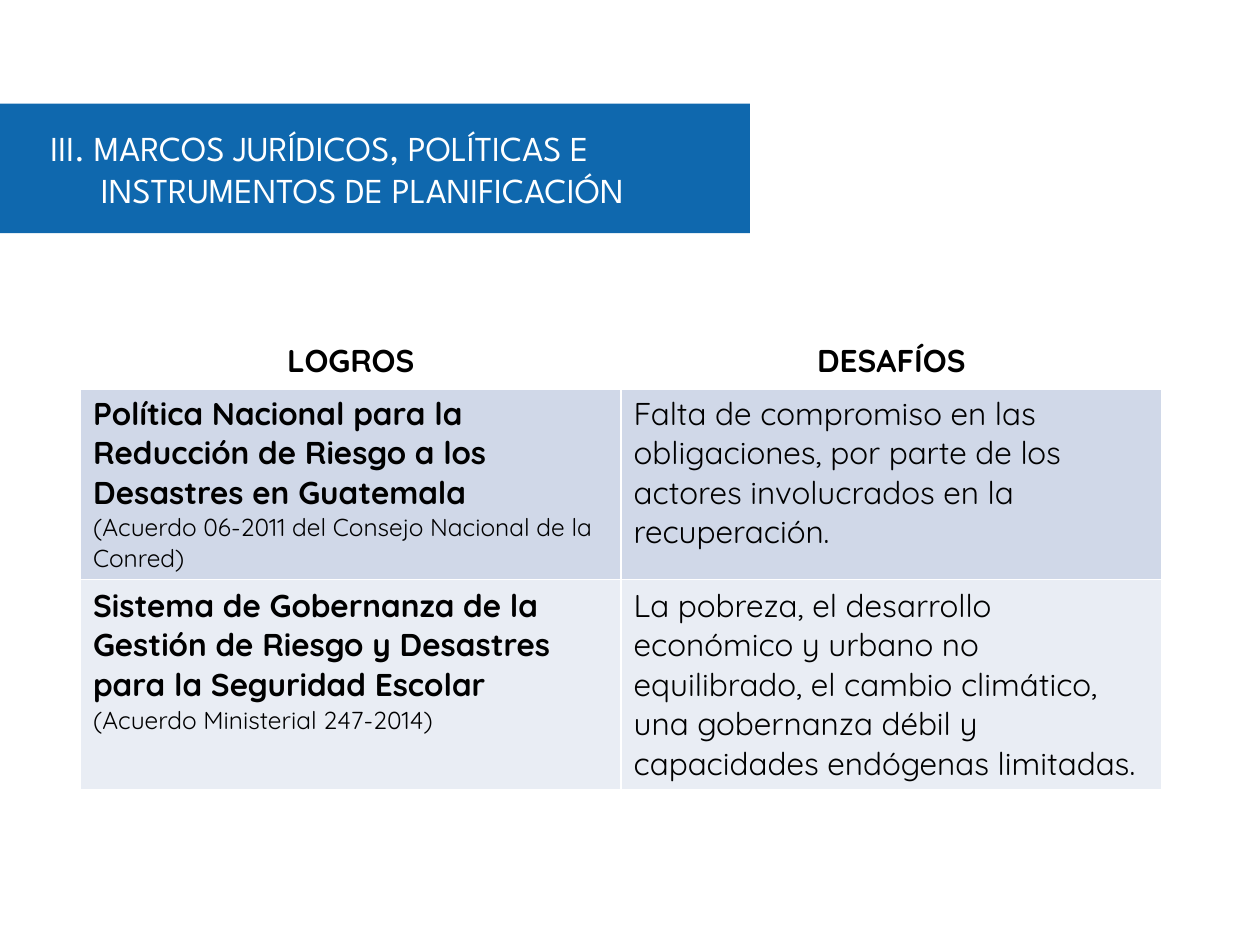
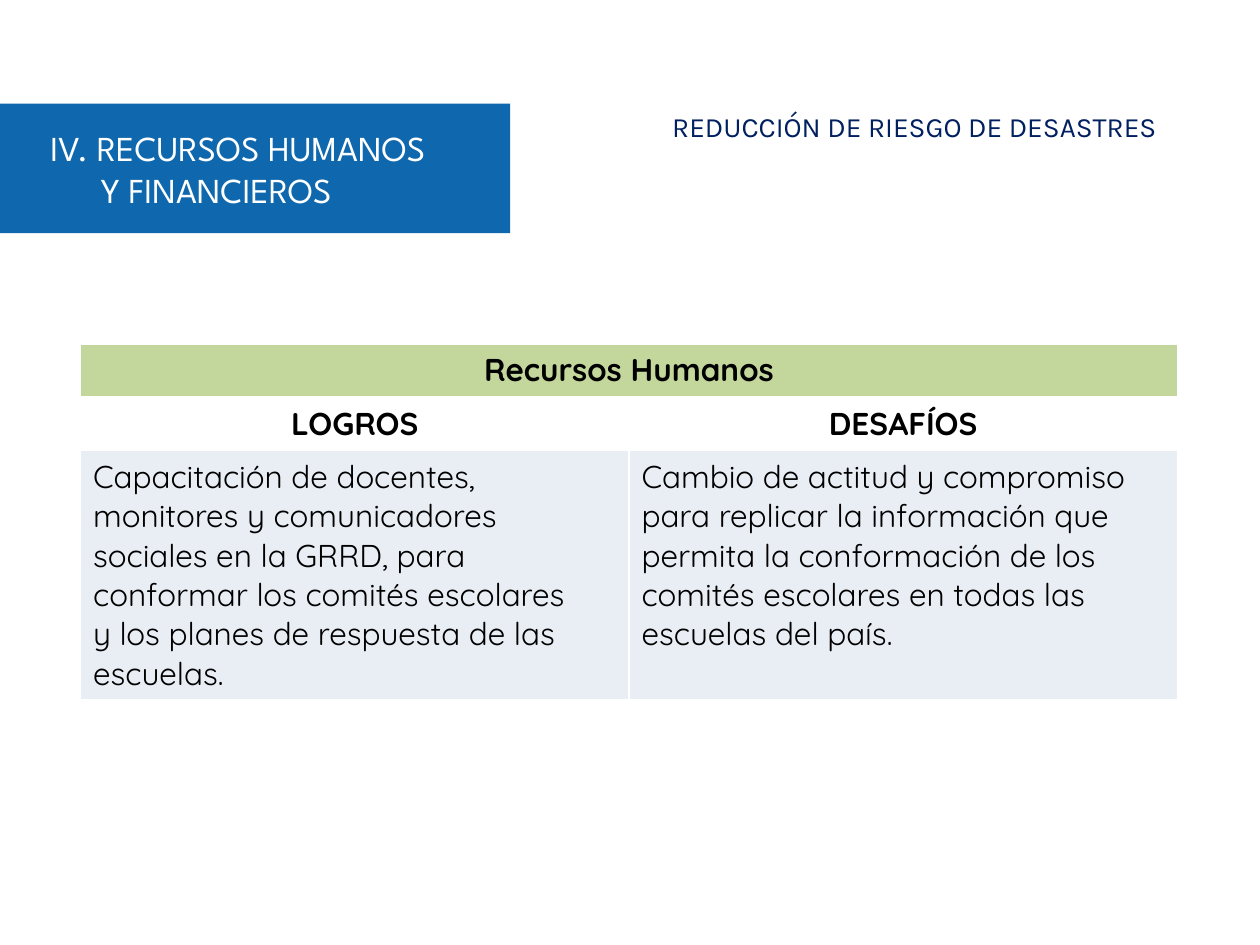
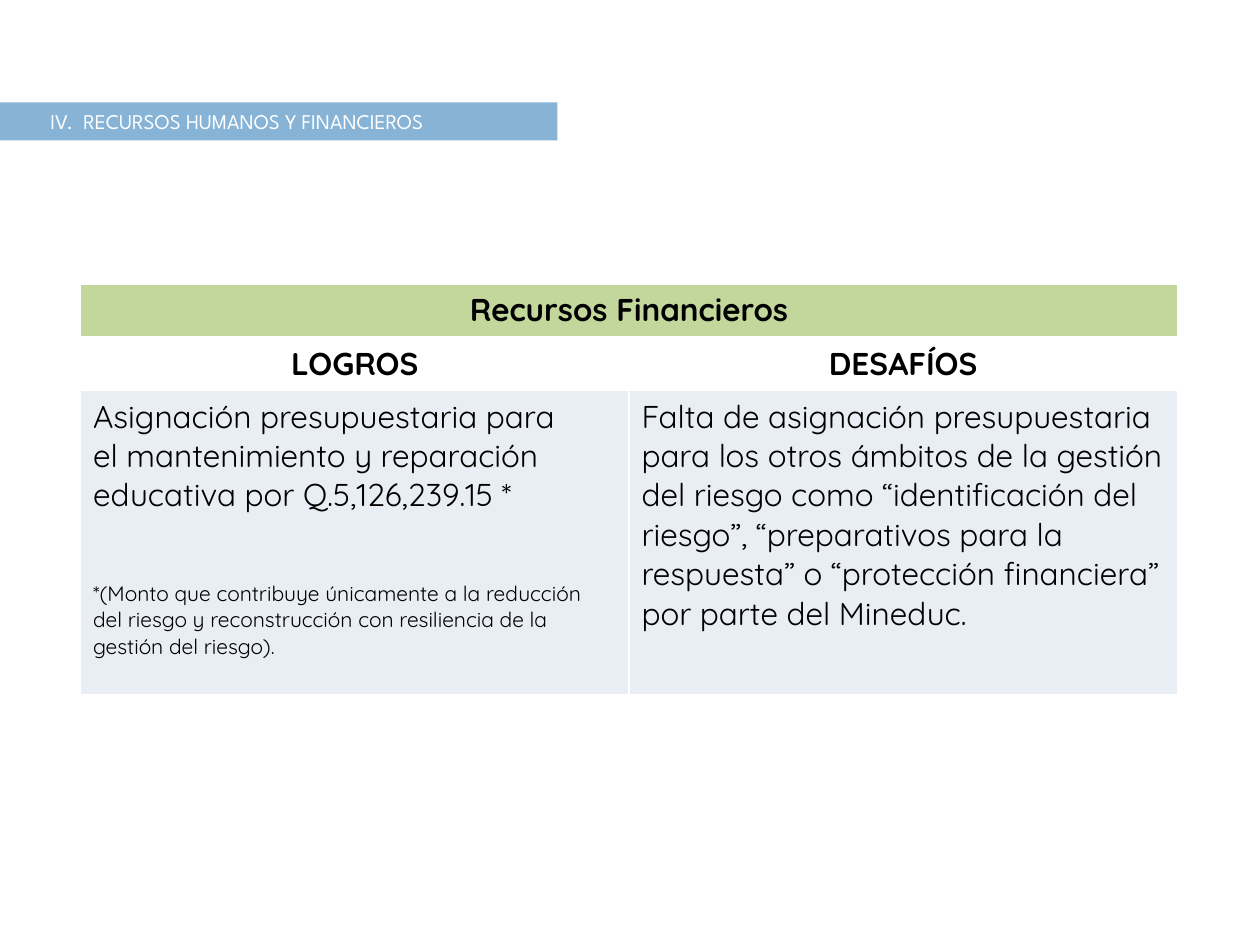
"""Build three slides on achievements and challenges in disaster risk reduction."""
from lxml import etree
from pptx import Presentation
from pptx.dml.color import RGBColor
from pptx.enum.shapes import MSO_SHAPE
from pptx.enum.text import MSO_ANCHOR, MSO_AUTO_SIZE, PP_ALIGN
from pptx.oxml.ns import qn
from pptx.util import Pt

RECTANGLE = MSO_SHAPE.RECTANGLE
TOP = MSO_ANCHOR.TOP
GROW = MSO_AUTO_SIZE.SHAPE_TO_FIT_TEXT
LEFT, CENTER, RIGHT = PP_ALIGN.LEFT, PP_ALIGN.CENTER, PP_ALIGN.RIGHT

TITLE_FONT, TABLE_FONT, TOPIC_FONT = "League Spartan", "Quicksand", "Karla"
WHITE, BLACK, BLUE, NAVY = "FFFFFF", "000000", "0F68AE", "002060"
GREEN, DARK_ROW, LIGHT_ROW = "C3D69B", "D0D8E8", "E9EDF4"
TABLE_LEFT = 46
HEADINGS = (WHITE, 29.7, [[("LOGROS", 18, True, 0)], [("DESAFÍOS", 18, True, 0)]])

SLIDES = [
    {
        "title": ["III. MARCOS JURÍDICOS, POLÍTICAS E INSTRUMENTOS DE PLANIFICACIÓN"],
        "title_size": 20, "title_box": (68.4, 415, 55.4), "hanging": 28.8,
        "band": (-16, 59.2, 444.5, 74), "opacity": 100,
        "topic": None,
        "table_top": 191.5, "column": 308.9,
        "rows": [
            HEADINGS,
            (DARK_ROW, 109.1, [
                [("Política Nacional para la Reducción de Riesgo a los Desastres "
                  "en Guatemala", 18, True, 0),
                 ("(Acuerdo 06-2011 del Consejo Nacional de la Conred)", 14, False, 0)],
                [("Falta de compromiso en las obligaciones, por parte de los actores "
                  "involucrados en la recuperación.", 18, False, 0)],
            ]),
            (LIGHT_ROW, 120, [
                [("Sistema de Gobernanza de la Gestión de Riesgo y Desastres para la "
                  "Seguridad Escolar", 18, True, 0),
                 ("(Acuerdo Ministerial 247-2014)", 14, False, 0)],
                [("La pobreza, el desarrollo económico y urbano no equilibrado, el cambio "
                  "climático, una gobernanza débil y capacidades endógenas limitadas.",
                  18, False, 0)],
            ]),
        ],
    },
    {
        "title": ["IV. RECURSOS HUMANOS", "Y FINANCIEROS"],
        "title_size": 20, "title_box": (68.4, 270, 55.4), "hanging": 28.8,
        "band": (-16, 59.2, 307.5, 74), "opacity": 100,
        "topic": "REDUCCIÓN DE RIESGO DE DESASTRES",
        "table_top": 196.5, "column": 313.4,
        "rows": [
            (GREEN, 31, [[("Recursos Humanos", 18, True, 0)]]),
            HEADINGS,
            (LIGHT_ROW, 142, [
                [("Capacitación de docentes, monitores y comunicadores sociales en la "
                  "GRRD, para conformar los comités escolares", 18, False, 0),
                 ("y los planes de respuesta de las escuelas.", 18, False, 0)],
                [("Cambio de actitud y compromiso para replicar la información que "
                  "permita la conformación de los comités escolares en todas las "
                  "escuelas del país.", 18, False, 0)],
            ]),
        ],
    },
    {
        "title": ["IV.\tRECURSOS HUMANOS Y FINANCIEROS"],
        "title_size": 12, "title_box": (58.3, 297, 21.8), "hanging": 18.9,
        "band": (-16.5, 58.5, 335, 21.8), "opacity": 50,
        "topic": None,
        "table_top": 162.2, "column": 313.4,
        "rows": [
            (GREEN, 31, [[("Recursos Financieros", 18, True, 0)]]),
            HEADINGS,
            (LIGHT_ROW, 174, [
                [("Asignación presupuestaria para", 18, False, 0),
                 ("el mantenimiento y reparación educativa por Q.5,126,239.15 *",
                  18, False, 0),
                 ("*(Monto que contribuye únicamente a la reducción del riesgo y "
                  "reconstrucción con resiliencia de la gestión del riesgo).",
                  12, False, 37.5)],
                [("Falta de asignación presupuestaria para los otros ámbitos de la "
                  "gestión del riesgo como “identificación del riesgo”, “preparativos "
                  "para la respuesta” o “protección financiera” por parte del Mineduc.",
                  18, False, 0)],
            ]),
        ],
    },
]


def write(paragraph, text, font, size, color, align, bold=False):
    """Add one formatted run to an aligned paragraph."""
    paragraph.alignment = align
    run = paragraph.add_run()
    run.text = text
    run.font.name = font
    run.font.size = Pt(size)
    run.font.bold = bold
    run.font.color.rgb = RGBColor.from_string(color)


def draw_borders(cell, row_index):
    """Outline a cell in white, with a thicker line under the first row."""
    properties = cell._tc.get_or_add_tcPr()
    for side in "LRTB":
        under_first = (row_index, side) in ((0, "B"), (1, "T"))
        line = etree.SubElement(properties, qn(f"a:ln{side}"), w=str(Pt(3 if under_first else 1)))
        fill = etree.SubElement(line, qn("a:solidFill"))
        etree.SubElement(fill, qn("a:srgbClr"), val=WHITE)


deck = Presentation()
deck.slide_width, deck.slide_height = Pt(720), Pt(540)

for content in SLIDES:
    slide = deck.slides.add_slide(deck.slide_layouts[5])
    rows, column = content["rows"], content["column"]

    table = slide.shapes.add_table(
        len(rows), 2, Pt(TABLE_LEFT), Pt(content["table_top"]),
        Pt(2 * column), Pt(sum(height for _, height, _ in rows))).table
    for table_column in table.columns:
        table_column.width = Pt(column)
    for row_index, (shade, height, cells) in enumerate(rows):
        table.rows[row_index].height = Pt(height)
        if len(cells) == 1:
            table.cell(row_index, 0).merge(table.cell(row_index, 1))
        for cell in table.rows[row_index].cells:
            draw_borders(cell, row_index)
            cell.fill.solid()
            cell.fill.fore_color.rgb = RGBColor.from_string(shade)
        align = LEFT if shade in (DARK_ROW, LIGHT_ROW) else CENTER
        for column_index, entries in enumerate(cells):
            frame = table.cell(row_index, column_index).text_frame
            for entry_index, (text, size, bold, gap) in enumerate(entries):
                paragraph = frame.add_paragraph() if entry_index else frame.paragraphs[0]
                if gap:
                    paragraph.space_before = Pt(gap)
                write(paragraph, text, TABLE_FONT, size, BLACK, align, bold)

    band = slide.shapes.add_shape(RECTANGLE, *map(Pt, content["band"]))
    band.shadow.inherit = False
    band.line.fill.background()
    band.fill.solid()
    band.fill.fore_color.rgb = RGBColor.from_string(BLUE)
    if content["opacity"] < 100:
        band_color = band._element.spPr.find(f".//{qn('a:srgbClr')}")
        etree.SubElement(band_color, qn("a:alpha"), val=str(content["opacity"] * 1000))

    title = slide.shapes.title
    slide.shapes._spTree.append(title._element)
    top, width, height = map(Pt, content["title_box"])
    title.left, title.top, title.width, title.height = Pt(21.6), top, width, height
    frame = title.text_frame
    frame.word_wrap = True
    frame.auto_size = GROW
    frame.vertical_anchor = TOP
    hanging = Pt(content["hanging"])
    for line_index, text in enumerate(content["title"]):
        paragraph = frame.add_paragraph() if line_index else frame.paragraphs[0]
        margins = paragraph._p.get_or_add_pPr()
        margins.set("marL", str(hanging))
        margins.set("indent", str(0 if line_index else -hanging))
        write(paragraph, text, TITLE_FONT, content["title_size"], WHITE, LEFT)

    if content["topic"]:
        topic = slide.shapes.add_textbox(Pt(330), Pt(59), Pt(342.5), Pt(26.6)).text_frame
        topic.word_wrap = True
        topic.auto_size = GROW
        topic.margin_right = Pt(11.5)
        write(topic.paragraphs[0], content["topic"], TOPIC_FONT, 16, NAVY, RIGHT)

deck.save("out.pptx")
